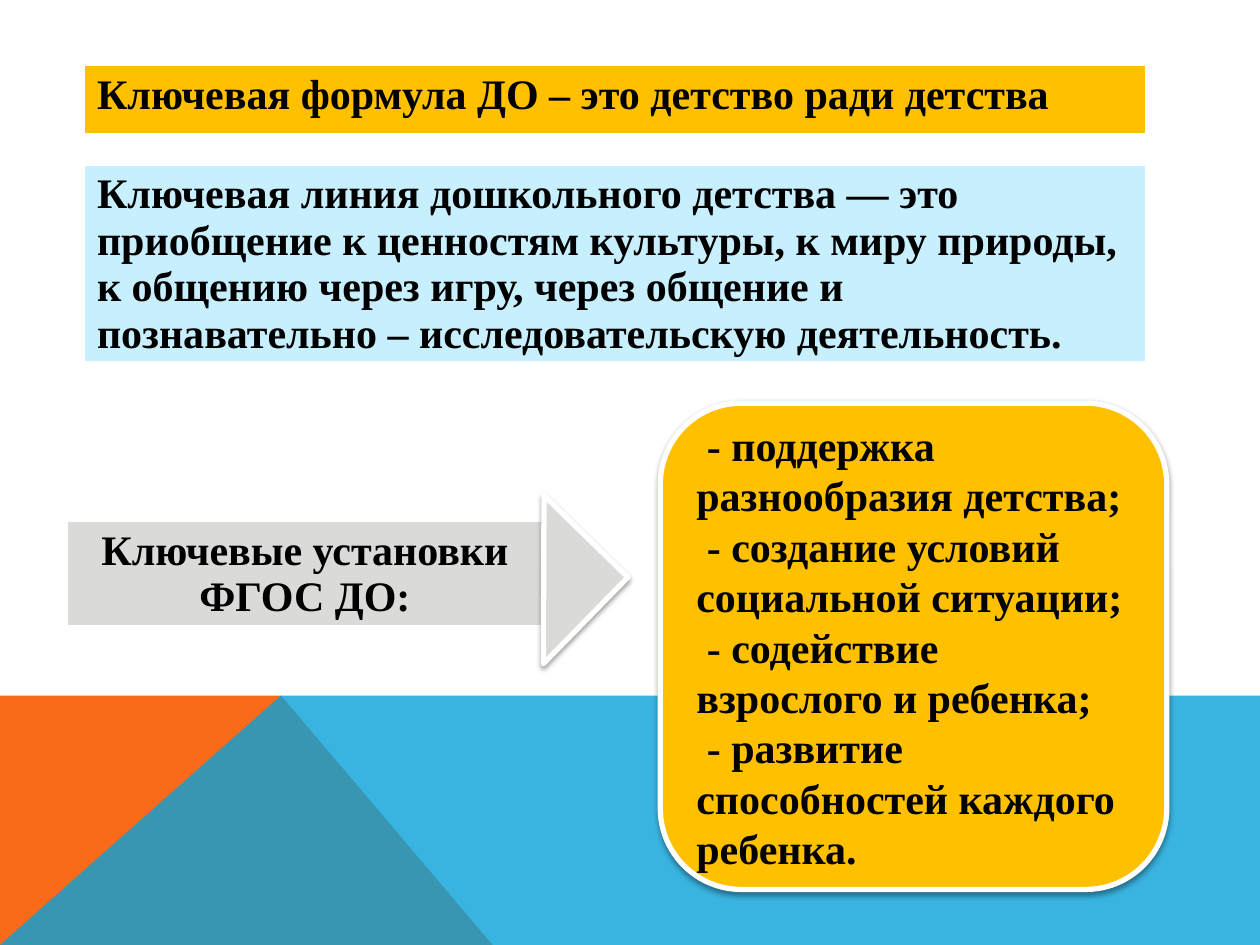
from dataclasses import dataclass
from lxml import etree
from pptx import Presentation
from pptx import util as u
from pptx.dml.color import RGBColor
from pptx.enum import shapes, text
from pptx.oxml import parse_xml
from pptx.oxml.ns import nsdecls, qn

BLACK = RGBColor(0x00, 0x00, 0x00)
WHITE = RGBColor(0xFF, 0xFF, 0xFF)
GOLD = RGBColor(0xFF, 0xC0, 0x00)
PALE = RGBColor(0xC8, 0xEF, 0xFD)
GREY = RGBColor(0xDA, 0xDA, 0xD9)
FLAME = RGBColor(0xF9, 0x6A, 0x1B)
BLUE = RGBColor(0x08, 0xA1, 0xD9)

FONT, SIZE = "Times New Roman", u.Pt(24)
COLS, ROWS = 100, 75  # square cells over a 10 x 7.5 inch slide
CELL = u.Inches(10) // COLS


@dataclass
class Box:
    x: float
    y: float
    w: float
    h: float

    def emu(self) -> list[int]:
        return [round(v * CELL) for v in (self.x, self.y, self.w, self.h)]


@dataclass
class Band:
    box: Box
    words: str
    color: RGBColor
    align: text.PP_ALIGN = text.PP_ALIGN.LEFT


BANDS = [
    Band(Box(6.7, 5.2, 84.2, 5.5),
         "Ключевая формула ДО – это детство ради детства", GOLD),
    Band(Box(6.7, 13.1, 84.2, 15.5),
         "Ключевая линия дошкольного детства — это приобщение к ценностям "
         "культуры, к миру природы, к общению через игру, через общение и "
         "познавательно – исследовательскую деятельность.", PALE),
    Band(Box(5.3, 41.4, 37.8, 8.1), "Ключевые установки ФГОС ДО:", GREY,
         text.PP_ALIGN.CENTER),
]
GOALS = [
    " - поддержка разнообразия детства;",
    " - создание условий социальной ситуации;",
    " - содействие взрослого и ребенка;",
    " - развитие способностей каждого ребенка.",
]


def style(par, align: text.PP_ALIGN) -> None:
    par.alignment = align
    for run in par.runs:
        run.font.name, run.font.size = FONT, SIZE
        run.font.bold = True
        run.font.color.rgb = BLACK


def wedge(slide, pts: list[tuple[float, float]], color: RGBColor):
    # The builder keeps whole units only, so points go in as EMU
    ends = [(round(x * CELL), round(y * CELL)) for x, y in pts]
    path = slide.shapes.build_freeform(*ends[0])
    path.add_line_segments(ends[1:], close=True)
    shape = path.convert_to_shape()
    shape.shadow.inherit = False
    shape.fill.solid()
    shape.fill.fore_color.rgb = color
    shape.line.fill.background()
    return shape


def band(slide, item: Band) -> None:
    table = slide.shapes.add_table(1, 1, *item.box.emu()).table
    cell = table.cell(0, 0)
    cell.text_frame.text = item.words
    style(cell.text_frame.paragraphs[0], item.align)
    props = cell._tc.get_or_add_tcPr()
    for side, width in zip("LRTB", (1, 1, 1, 3)):
        props.append(parse_xml(
            f'<a:ln{side} {nsdecls("a")} w="{u.Pt(width)}"><a:solidFill>'
            f'<a:srgbClr val="{WHITE}"/></a:solidFill></a:ln{side}>'))
    cell.fill.solid()
    cell.fill.fore_color.rgb = item.color


def raised(slide, kind: shapes.MSO_SHAPE, box: Box, color: RGBColor):
    shape = slide.shapes.add_shape(kind, *box.emu())
    shape.fill.solid()
    shape.fill.fore_color.rgb = color
    shape.line.color.rgb = WHITE
    shape.line.width = u.Pt(3)
    # Soft shadow straight below
    shape.shadow.inherit = False
    glow = shape._element.spPr.find(qn("a:effectLst"))
    glow.append(parse_xml(
        f'<a:outerShdw {nsdecls("a")} blurRad="{u.Pt(3.1)}" dist="{u.Pt(1.6)}" '
        f'dir="5400000" rotWithShape="0"><a:srgbClr val="{BLACK}">'
        '<a:alpha val="38000"/></a:srgbClr></a:outerShdw>'))
    return shape


def main() -> None:
    deck = Presentation()
    deck.slide_width, deck.slide_height = COLS * CELL, ROWS * CELL
    slide = deck.slides.add_slide(deck.slide_layouts[6])

    # Coloured floor
    top, peak = 55.2, (22.3, 55.2)
    wedge(slide, [(0, ROWS), (0, top), peak, (39.1, ROWS)], FLAME)
    sea = wedge(slide, [(0, ROWS), peak, (COLS, top), (COLS, ROWS)], BLUE)
    tint = sea._element.spPr.find(qn("a:solidFill"))[0]
    etree.SubElement(tint, qn("a:alpha")).set("val", "80000")

    # Text bands
    for item in BANDS:
        band(slide, item)

    # Goals card
    card = raised(slide, shapes.MSO_SHAPE.ROUNDED_RECTANGLE,
                  Box(52.4, 32, 40.2, 38.6), GOLD)
    frame = card.text_frame
    frame.text = "\n".join(GOALS)
    frame.word_wrap = True
    frame.vertical_anchor = text.MSO_ANCHOR.MIDDLE
    for par in frame.paragraphs:
        style(par, text.PP_ALIGN.LEFT)

    # Pointer from the last band to the card
    tip = raised(slide, shapes.MSO_SHAPE.RIGHT_TRIANGLE,
                 Box(38.5, 41.2, 9.3, 9.6), GREY)
    tip.rotation = 224.3

    deck.save("out.pptx")


if __name__ == "__main__":
    main()
